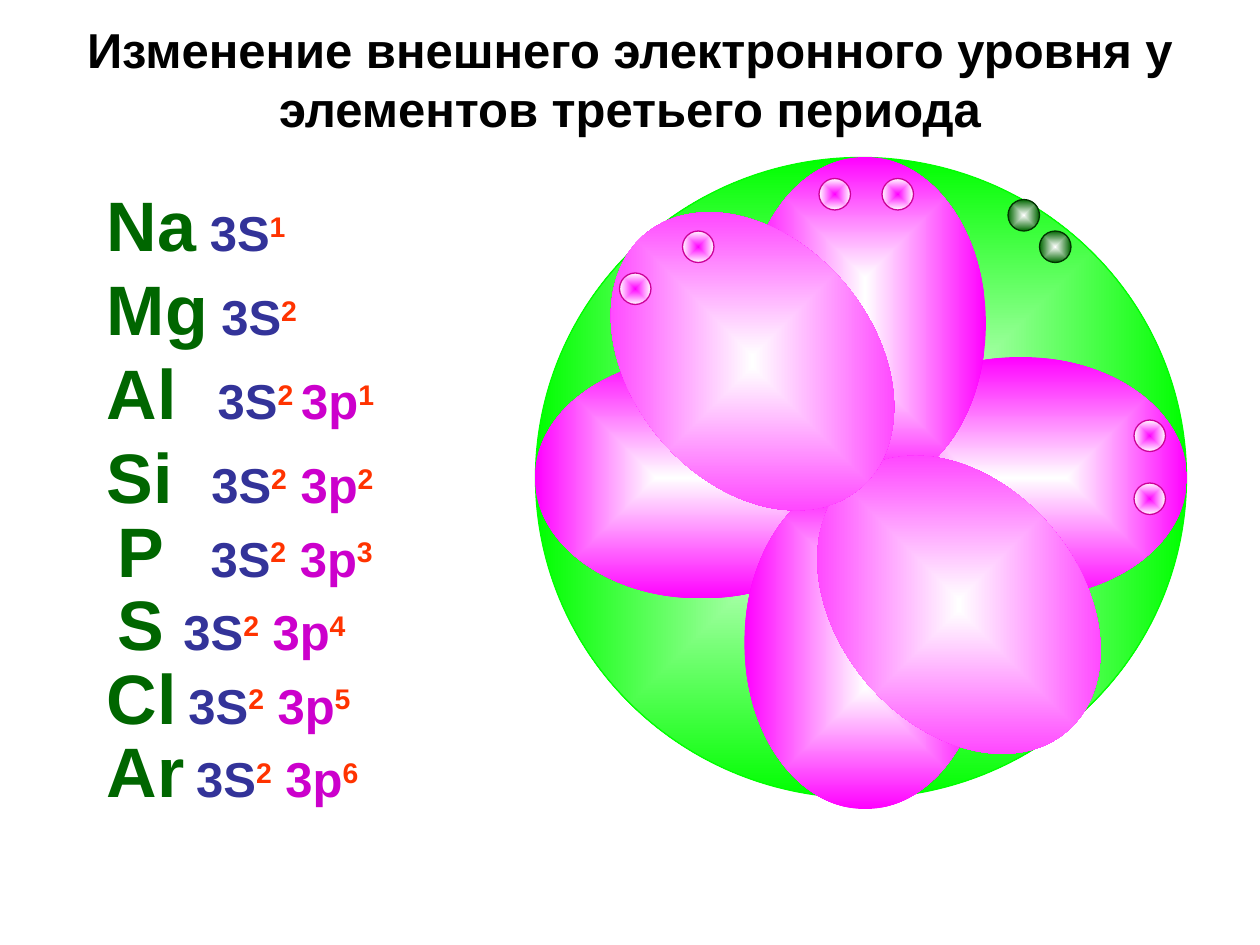
from dataclasses import dataclass
from math import cos, radians, sin

from pptx import Presentation
from pptx.dml.color import RGBColor as RGB
from pptx.enum.shapes import MSO_SHAPE as SHAPE
from pptx.enum.text import MSO_ANCHOR as ANCHOR, PP_ALIGN as ALIGN
from pptx.oxml import parse_xml
from pptx.oxml.ns import nsdecls
from pptx.util import Inches, Pt


@dataclass(frozen=True)
class Theme:
    font: str = "Arial"
    title_size: int = 28
    symbol_size: int = 40
    shell_size: int = 28
    gap_size: int = 24
    line_width: float = 0.75
    black: str = "000000"
    white: str = "FFFFFF"
    symbol: str = "006600"
    s_shell: str = "333399"
    p_shell: str = "CC00CC"
    count: str = "FF3300"
    disc: str = "00FF00"
    petal: str = "FF00FF"
    petal_edge: str = "CC0099"
    s_electron: str = "006600"
    s_edge: str = "003300"


class Deck:
    COLS, ROWS = 120, 90

    def __init__(self, theme):
        self.theme = theme
        self.prs = Presentation()
        self.prs.slide_width, self.prs.slide_height = Inches(10), Inches(7.5)
        self.s = self.prs.slides.add_slide(self.prs.slide_layouts[6])

    def box(self, x, y, w, h):
        cell_w = self.prs.slide_width / self.COLS
        cell_h = self.prs.slide_height / self.ROWS
        return [round(v) for v in (x * cell_w, y * cell_h, w * cell_w, h * cell_h)]

    def text(self, at, runs, tab=None, align=ALIGN.LEFT, **frame):
        tf = self.s.shapes.add_textbox(*self.box(*at)).text_frame
        for key, value in {"word_wrap": True, **frame}.items():
            setattr(tf, key, value)
        p = tf.paragraphs[0]
        p.alignment = align
        if tab:
            p_pr = p._p.get_or_add_pPr()
            p_pr.append(parse_xml(
                f'<a:tabLst {nsdecls("a")}><a:tab pos="{Inches(tab)}" algn="l"/></a:tabLst>'))
        for text, size, color, raised in runs:
            r = p.add_run()
            r.text = text
            fmt = {"name": self.theme.font, "size": Pt(size), "bold": True}
            for key, value in fmt.items():
                setattr(r.font, key, value)
            r.font.color.rgb = RGB.from_string(color)
            if raised:
                r.font._element.set("baseline", "30000")

    def element(self, row, col, symbol, gap, gap_size, tab, shells):
        t = self.theme
        runs = [(symbol, t.symbol_size, t.symbol, False), (gap, gap_size, t.black, False)]
        for (shell, count), color in zip(shells, (t.s_shell, t.p_shell)):
            runs += [(shell, t.shell_size, color, False), (count, t.shell_size, t.count, True)]
        self.text((col, row, 36, 9.2), runs, tab, margin_top=Inches(0.11))

    def ellipse(self, at, inner, outer, edge=None, rotation=0):
        sp = self.s.shapes.add_shape(SHAPE.OVAL, *self.box(*at))
        sp.shadow.inherit = False
        sp.rotation = rotation
        sp.fill.background()
        sp_pr = sp._element.spPr
        no_fill = sp_pr.find("{*}noFill")
        sp_pr.replace(no_fill, parse_xml(
            f'<a:gradFill {nsdecls("a")} rotWithShape="0"><a:gsLst>'
            f'<a:gs pos="0"><a:srgbClr val="{inner}"/></a:gs>'
            f'<a:gs pos="100000"><a:srgbClr val="{outer}"/></a:gs></a:gsLst>'
            '<a:path path="shape"><a:fillToRect l="50000" t="50000" r="50000" b="50000"/>'
            '</a:path></a:gradFill>'))
        if edge:
            sp.line.color.rgb = RGB.from_string(edge)
            sp.line.width = Pt(self.theme.line_width)
        else:
            sp.line.fill.background()

    def orbital(self, cx, cy, rotation, length=31.7, width=23, reach=15.2):
        dx, dy = reach * cos(radians(rotation)), reach * sin(radians(rotation))
        for side in (-1, 1):
            at = (cx + side * dx - length / 2, cy + side * dy - width / 2, length, width)
            self.ellipse(at, self.theme.white, self.theme.petal, rotation=rotation)

    def electrons(self, places, inner, outer, edge):
        for x, y in places:
            self.ellipse((x, y, 3, 3), inner, outer, edge)


def main():
    t = Theme()
    deck = Deck(t)
    deck.text((6, 0, 108, 15),
              [("Изменение внешнего электронного уровня у элементов третьего периода",
                t.title_size, t.black, False)],
              align=ALIGN.CENTER, vertical_anchor=ANCHOR.MIDDLE)

    s2 = ("3S", "2")
    elements = [
        (16, 9, "Na", " ", t.shell_size, None, [("3S", "1")]),
        (24, 9, "Mg", " ", t.shell_size, None, [s2]),
        (32, 9, "Al", "\t", t.shell_size, 0.88, [("3S", "2 "), ("3p", "1")]),
        (40, 9, "Si", "\t", t.symbol_size, 0.83, [s2, (" 3p", "2")]),
        (47, 10, "P", "\t", t.gap_size, 0.74, [s2, (" 3p", "3")]),
        (54, 10, "S", " ", t.symbol_size, None, [s2, (" 3p", "4")]),
        (61, 9, "Cl", " ", t.gap_size, None, [s2, (" 3p", "5")]),
        (68, 9, "Ar", " ", t.gap_size, None, [s2, (" 3p", "6")]),
    ]
    for row in elements:
        deck.element(*row)

    deck.ellipse((51, 15, 62, 61), t.white, t.disc, t.disc)
    deck.electrons([(96, 19), (99, 22)], t.white, t.s_electron, t.s_edge)
    for orbital in [(82, 45.5, 0), (82.4, 46, 270), (81.5, 46, 229.7)]:
        deck.orbital(*orbital)
    deck.electrons([(108, 40), (108, 46), (78, 17), (84, 17), (59, 26), (65, 22)],
                   t.petal, t.white, t.petal_edge)
    deck.prs.save("out.pptx")


if __name__ == "__main__":
    main()
